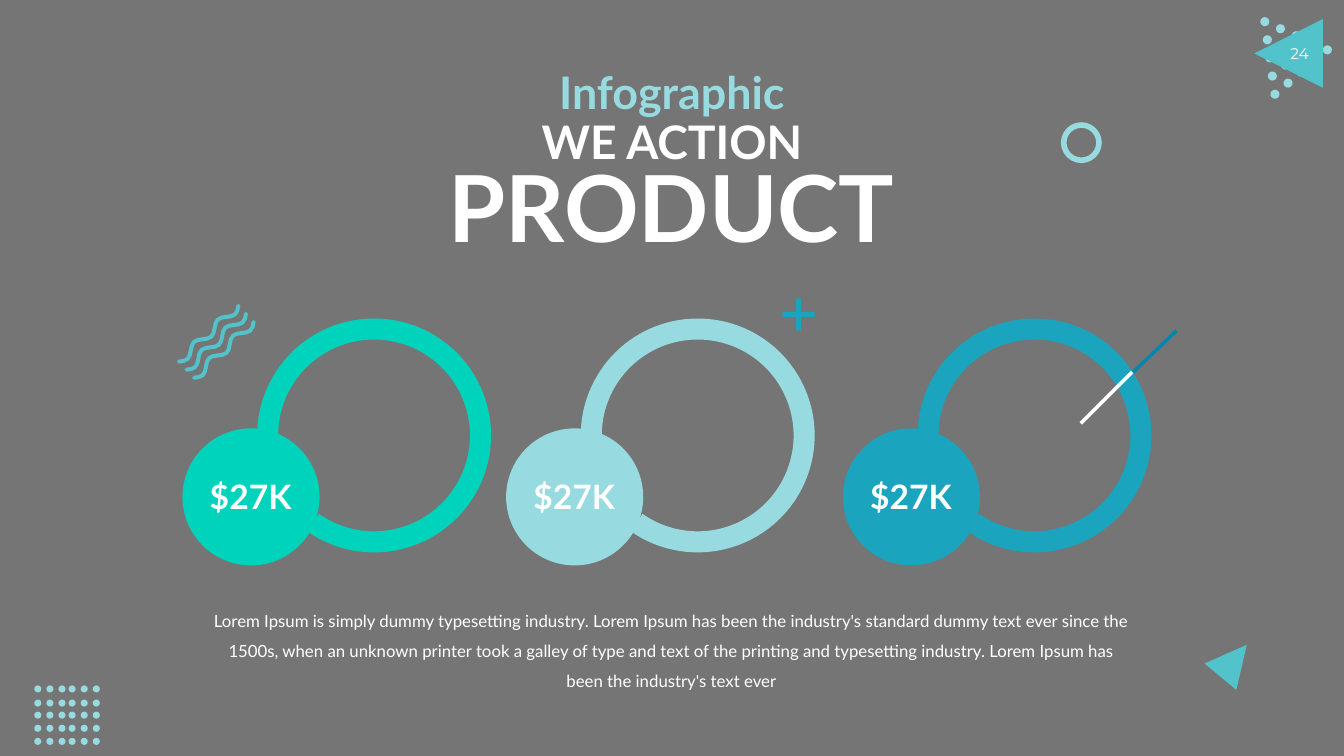
"""Build the product infographic slide with three priced rings."""
from itertools import product
from math import atan2, cos, pi, sin

from lxml.etree import SubElement
from pptx import Presentation
from pptx.dml.color import RGBColor as Rgb
from pptx.enum.shapes import MSO_CONNECTOR as Connector, MSO_SHAPE as Shape
from pptx.enum.text import MSO_ANCHOR as Anchor, MSO_AUTO_SIZE as AutoSize, PP_ALIGN as Align
from pptx.oxml.ns import qn
from pptx.util import Inches, Pt

COLORS = {"black": "000000", "white": "FFFFFF", "mint": "00D3BC", "pale": "97DAE0",
          "teal": "52C3CB", "blue": "1AA4BE", "deep": "0187AD"}
FRAME = {"word_wrap": True, "auto_size": AutoSize.SHAPE_TO_FIT_TEXT,
         "vertical_anchor": Anchor.TOP}
SIDES = ("left", "top", "width", "height")
PRICES = ((8.36, "blue", "$27K"), (5.02, "pale", "$27K"), (1.81, "mint", "$27K"))
DESCRIPTION = (
    "Lorem Ipsum is simply dummy typesetting industry. Lorem Ipsum has been the industry's "
    "standard dummy text ever since the 1500s, when an unknown printer took a galley of type "
    "and text of the printing and typesetting industry. Lorem Ipsum has been the industry's "
    "text ever")


def apply(target, values):
    """Set every named value on the target."""
    for name, value in values.items():
        setattr(target, name, value)


class SlideBuilder:
    """Hold the style and the current slide."""

    def __init__(self, slide, font="Lato"):
        """Keep the slide and its main font."""
        self.shapes = slide.shapes
        self.font = font

    def paint(self, shape, fill=None, line=None, weight=0, alpha=None):
        """Give a shape its fill and outline."""
        shape.shadow.inherit = False
        if fill:
            shape.fill.solid()
            shape.fill.fore_color.rgb = Rgb.from_string(COLORS[fill])
        else:
            shape.fill.background()
        if line:
            shape.line.color.rgb = Rgb.from_string(COLORS[line])
            shape.line.width = Pt(weight)
        else:
            shape.line.fill.background()
        if alpha:
            color = next(shape.element.iter(qn("a:srgbClr")))
            SubElement(color, qn("a:alpha"), val=str(alpha * 1000))

    def shape(self, kind, box, fill=None, rotation=0, adjustments=(), parent=None, **look):
        """Add a preset shape to the slide or to a group."""
        preset = (parent or self).shapes.add_shape(kind, *map(Inches, box))
        preset.rotation = rotation
        for index, value in enumerate(adjustments):
            preset.adjustments[index] = value
        self.paint(preset, fill, **look)

    def dots(self, corners, size, rotation):
        """Add a group of equal pale dots."""
        cluster = self.shapes.add_group_shape()
        for left, top in corners:
            self.shape(Shape.OVAL, (left, top, size, size), "pale", rotation, parent=cluster)

    def text(self, words, box, size, color="white", bold=False, font=None, spacing=1.0,
             title=False):
        """Add centred text, in the title placeholder when asked."""
        if title:
            holder = self.shapes.title
            holder.element.getparent().append(holder.element)
            apply(holder, dict(zip(SIDES, map(Inches, box))))
        else:
            holder = self.shapes.add_textbox(*map(Inches, box))
        apply(holder.text_frame, FRAME)
        paragraph = holder.text_frame.paragraphs[0]
        apply(paragraph, {"alignment": Align.CENTER, "line_spacing": spacing})
        run = paragraph.add_run()
        run.text = words
        apply(run.font, {"name": font or self.font, "size": Pt(size), "bold": bold})
        run.font.color.rgb = Rgb.from_string(COLORS[color])

    def line(self, start, end, color, weight):
        """Add a straight line."""
        ends = map(Inches, (*start, *end))
        stroke = self.shapes.add_connector(Connector.STRAIGHT, *ends)
        stroke.line.color.rgb = Rgb.from_string(COLORS[color])
        stroke.line.width = Pt(weight)
        SubElement(stroke.element.spPr, qn("a:effectLst"))

    def waves(self, left, top, fill, rotation, count=3, gap=0.11):
        """Add stacked round-ended sine bands as one outline."""
        length, swing, radius, steps = 0.81, 0.04, 0.02, 20
        pitch = 5 * pi / length
        spine = []
        for step in range(steps + 1):
            x = length * step / steps
            heading = atan2(swing * pitch * cos(pitch * x), 1)
            spine.append((x, swing * sin(pitch * x), heading))
        start, end = spine[0], spine[-1]
        rim = [(x, y, heading - pi / 2) for x, y, heading in spine] + [end]
        rim += [(x, y, heading + pi / 2) for x, y, heading in reversed(spine)]
        rim.append((*start[:2], start[2] + pi))
        builder = None
        for band in range(count):
            points = [(Inches(left + radius + x + radius * cos(angle)),
                       Inches(top + swing + radius + band * gap + y + radius * sin(angle)))
                      for x, y, angle in rim]
            if builder is None:
                builder = self.shapes.build_freeform(*points[0])
            else:
                builder.move_to(*points[0])
            builder.add_line_segments(points[1:], close=True)
        outline = builder.convert_to_shape()
        outline.rotation = rotation
        self.paint(outline, fill)

    def ring(self, left, color):
        """Add an open ring."""
        self.shape(Shape.BLOCK_ARC, (left, 3.16, 2.32, 2.32), color,
                   adjustments=(108, 75.07, 0.09))

    def price(self, left, color, amount):
        """Add a disc with its price."""
        self.shape(Shape.OVAL, (left, 4.25, 1.36, 1.36), color)
        self.text(amount, (left - 0.04, 4.67, 1.43, 0.5), 24, bold=True)


def main():
    """Compose and save the slide."""
    deck = Presentation()
    deck.slide_width, deck.slide_height = Inches(13.33), Inches(7.5)
    page = SlideBuilder(deck.slides.add_slide(deck.slide_layouts[5]))

    page.shape(Shape.RECTANGLE, (0, 0, 13.33, 7.5), "black", alpha=54)
    for left, color, _ in PRICES:
        page.ring(left + 0.74, color)
    page.text(DESCRIPTION, (2.02, 5.91, 9.28, 0.97), 12, spacing=1.5)

    page.dots([(12.5 + 0.62 * column / 4 + 0.1 * row / 4, 0.17 + 0.07 * column + 0.18 * row)
               for column in range(5) for row in range(5 - column)], 0.09, 261.6)
    page.shape(Shape.ISOSCELES_TRIANGLE, (12.44, 0.19, 0.68, 0.68), "teal", rotation=270)
    page.text("24", (12.59, 0.39, 0.6, 0.29), 11, font="Montserrat")

    page.waves(1.72, 3.22, "teal", rotation=316.8)
    page.shape(Shape.OVAL, (10.55, 1.24, 0.35, 0.35), line="pale", weight=4)
    page.dots(product((0.34, 0.46, 0.58, 0.68, 0.8, 0.92),
                      (6.8, 6.94, 7.06, 7.19, 7.32)), 0.07, 90)
    page.line((11.23, 3.7), (11.67, 3.28), "deep", 2.5)
    page.shape(Shape.ISOSCELES_TRIANGLE, (12.03, 6.35, 0.41, 0.41), "teal", rotation=39.6)
    page.shape(Shape.CROSS, (7.76, 2.96, 0.32, 0.32), "blue", adjustments=(0.42,))
    page.line((10.72, 4.2), (11.23, 3.69), "white", 2.5)

    page.text("Infographic", (4.81, 0.59, 3.71, 0.64), 32, "pale", bold=True)
    page.text("WE ACTION", (4.95, 1.08, 3.43, 0.66), 33, bold=True)
    page.text("PRODUCT", (2.29, 1.44, 8.74, 1.21), 66, bold=True, title=True)
    for left, color, amount in PRICES:
        page.price(left, color, amount)
    deck.save("out.pptx")


if __name__ == "__main__":
    main()
